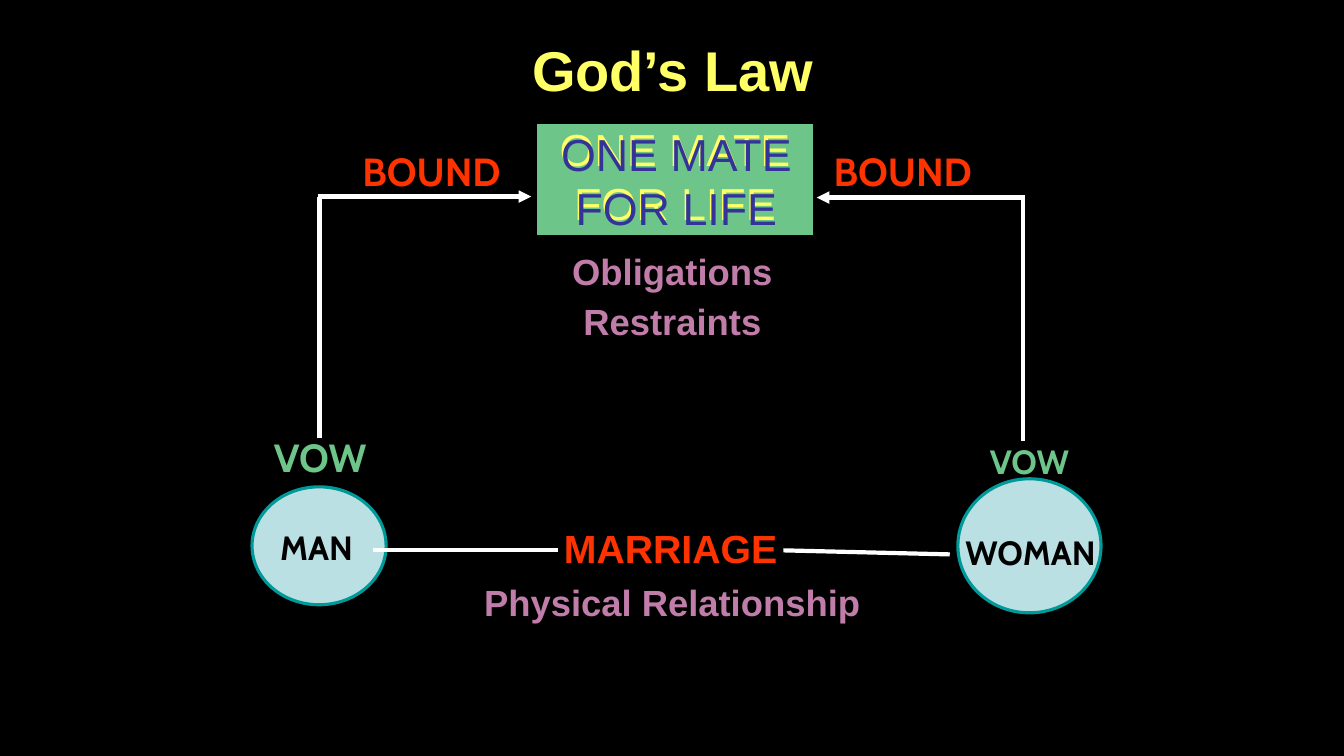
from lxml.etree import SubElement
from pptx import Presentation
from pptx.dml.color import RGBColor
from pptx.enum.shapes import MSO_CONNECTOR as Link, MSO_SHAPE as Preset
from pptx.enum.text import MSO_ANCHOR as Anchor, PP_ALIGN as Align
from pptx.oxml.ns import qn
from pptx.util import Emu, Pt

PX = 9144
BLACK, WHITE, YELLOW = "000000", "FFFFFF", "FFFF66"
RED, GREEN, MAUVE, NAVY = "FF3300", "6DC58A", "C17DAA", "333399"
PALE, TEAL = "BBE0E3", "009999"


def px(*lengths):
    return [Emu(length * PX) for length in lengths]


def paint(color_format, color):
    color_format.rgb = RGBColor.from_string(color)


def write(frame, lines, size, color, font="Arial", bold=True,
          align=Align.CENTER, anchor=Anchor.TOP, gap=0, spacing=None):
    frame.word_wrap = True
    frame.vertical_anchor = anchor
    for index, line in enumerate(lines):
        paragraph = frame.paragraphs[0] if index == 0 else frame.add_paragraph()
        paragraph.text = line
        paragraph.alignment = align
        if spacing:
            paragraph.line_spacing = spacing
        if index and gap:
            paragraph.space_before = Pt(gap)
        paragraph.font.name = font
        paragraph.font.size = Pt(size)
        paragraph.font.bold = bold
        paint(paragraph.font.color, color)


def add_label(slide, box, lines, size, color, **style):
    label = slide.shapes.add_textbox(*px(*box))
    write(label.text_frame, lines, size, color, **style)


def add_figure(slide, preset, box, fill, outline, width):
    figure = slide.shapes.add_shape(preset, *px(*box))
    figure.shadow.inherit = False
    figure.fill.solid()
    paint(figure.fill.fore_color, fill)
    paint(figure.line.color, outline)
    figure.line.width = Pt(width)
    return figure


def add_line(slide, start, end, arrow=False):
    link = slide.shapes.add_connector(Link.STRAIGHT, *px(*start, *end))
    paint(link.line.color, WHITE)
    link.line.width = Pt(3)
    if arrow:
        SubElement(link.line._get_or_add_ln(), qn("a:tailEnd"), type="triangle")
    SubElement(link._element.spPr, qn("a:effectLst"))


def add_law(slide):
    motto = ["ONE MATE", "FOR LIFE"]
    add_label(slide, (217, 30, 900, 78), ["God’s Law"], 40, YELLOW,
              anchor=Anchor.MIDDLE)
    panel = add_figure(slide, Preset.RECTANGLE, (532, 122, 275, 112),
                       GREEN, BLACK, 0.75)
    write(panel.text_frame, motto, 32, YELLOW, bold=False, gap=4, spacing=0.9)
    add_label(slide, (421, 121, 500, 117), motto, 32, NAVY, bold=False)
    add_label(slide, (530, 242, 274, 103), ["Obligations", "Restraints"],
              26, MAUVE, gap=5)


def add_spouse(slide, name, circle, name_box, vow_box, vow_size):
    add_figure(slide, Preset.OVAL, circle, PALE, TEAL, 2.25)
    add_label(slide, name_box, [name], 24, BLACK, font="Cabin")
    add_label(slide, vow_box, ["VOW"], vow_size, GREEN, font="Cabin")


def add_bond(slide, riser_x, riser_end, corner, tip, label_box, align):
    add_line(slide, (riser_x, 195), (riser_x, riser_end))
    add_line(slide, corner, tip, arrow=True)
    add_label(slide, label_box, ["BOUND"], 28, RED, font="Cabin", align=align)


def add_marriage(slide):
    add_label(slide, (374, 515, 582, 57), ["MARRIAGE"], 28, RED)
    add_label(slide, (374, 571, 586, 53), ["Physical Relationship"], 26, MAUVE)
    add_line(slide, (370, 546), (553, 546))
    add_line(slide, (777, 546), (942, 550))


def main():
    deck = Presentation()
    deck.slide_width, deck.slide_height = px(1333, 750)
    slide = deck.slides.add_slide(deck.slide_layouts[6])
    slide.background.fill.solid()
    paint(slide.background.fill.fore_color, BLACK)

    add_law(slide)
    add_spouse(slide, "MAN", (250, 483, 133, 117),
               (264, 518, 100, 50), (254, 425, 127, 57), 28)
    add_spouse(slide, "WOMAN", (950, 475, 142, 133),
               (942, 523, 160, 50), (964, 433, 114, 50), 24)
    add_bond(slide, 317, 435, (315, 195), (527, 195),
             (333, 141, 190, 57), Align.CENTER)
    add_bond(slide, 1015, 438, (1017, 196), (810, 196),
             (817, 141, 166, 57), Align.LEFT)
    add_marriage(slide)
    deck.save("out.pptx")


if __name__ == "__main__":
    main()
